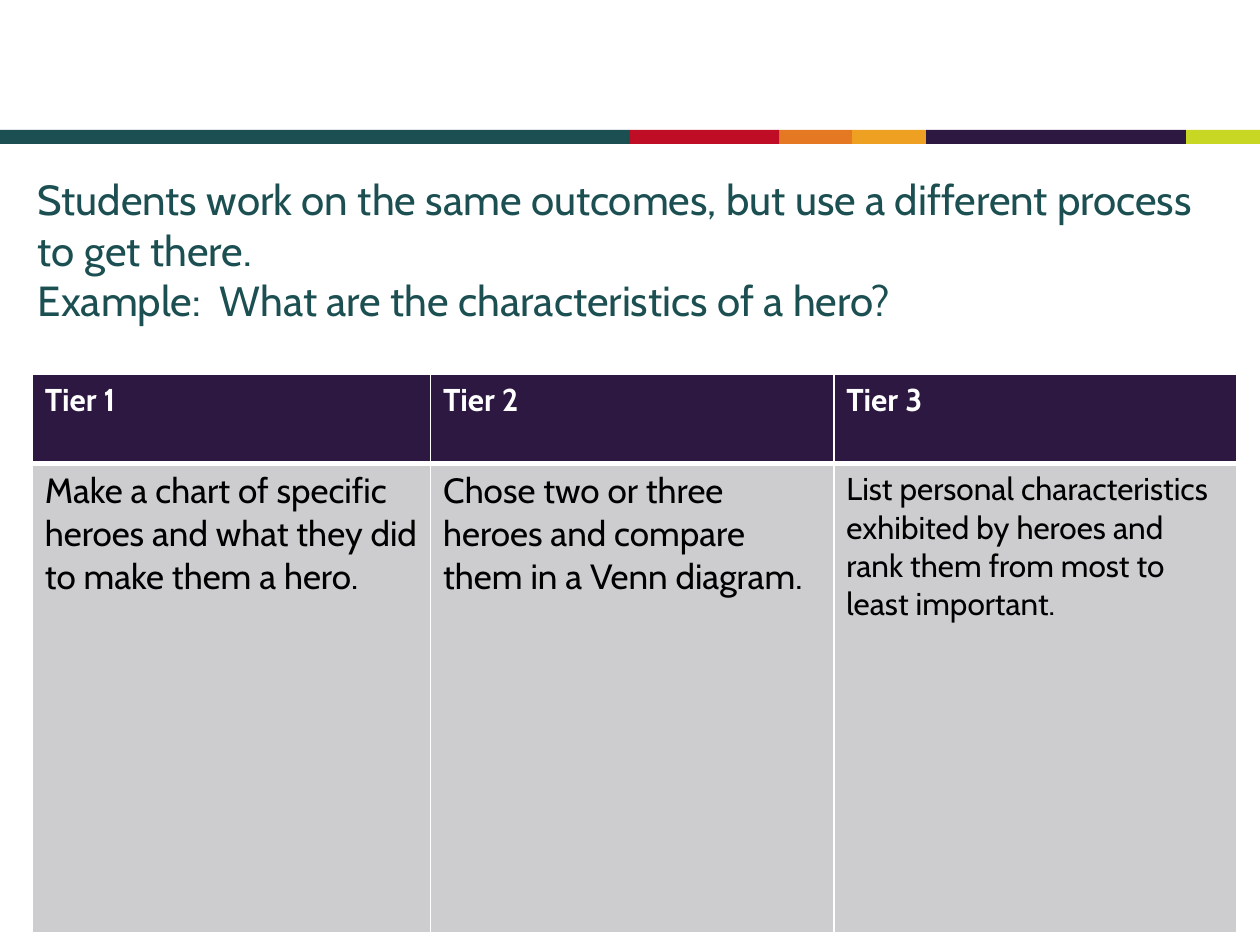
import copy

import pptx
import pptx.dml.color
import pptx.enum.shapes
import pptx.enum.text
import pptx.oxml
import pptx.oxml.ns
import pptx.util

Cm = pptx.util.Cm
Pt = pptx.util.Pt

THEME = {
    "font": "Cabin",
    "teal": "1C4F51", "red": "BF0D26", "orange": "E47823",
    "amber": "EDA021", "purple": "2C1840", "lime": "C8D724",
    "white": "FFFFFF", "black": "000000", "grey": "CDCCCF",
    "title": 24, "header": 18, "body": 20, "body_small": 18,
    "thin": 1, "thick": 3,
}

TITLE = ("Students work on the same outcomes, but use a different process to get there.\v"
         "Example:  What are the characteristics of a hero?")
# Colour and width in cm of each part of the stripe, left to right
STRIPE = [("teal", 12.7), ("red", 3.02), ("orange", 1.46),
          ("amber", 1.49), ("purple", 5.24), ("lime", 1.49)]
# Heading, task, size of the task text
TIERS = [
    ("Tier 1", "Make a chart of specific heroes and what they did to make them a hero.", "body"),
    ("Tier 2", "Chose two or three heroes and compare them in a Venn diagram.", "body"),
    ("Tier 3", "List personal characteristics exhibited by heroes and rank them "
               "from most to least important.", "body_small"),
]
COLUMN_WIDTHS = [8.03, 8.13, 8.13]
ROW_HEIGHTS = [1.8, 9.45]


def rgb(name):
    return pptx.dml.color.RGBColor.from_string(THEME[name])


def format_runs(p, size, color, bold=False):
    values = {"name": THEME["font"], "size": Pt(THEME[size]), "bold": bold}
    for r in p.runs:
        for key, value in values.items():
            setattr(r.font, key, value)
        r.font.color.rgb = rgb(color)


def add_stripe(s):
    left = 0
    for color, width in STRIPE:
        sp = s.shapes.add_shape(pptx.enum.shapes.MSO_SHAPE.RECTANGLE,
                                Cm(left), Cm(2.62), Cm(width), Cm(0.28))
        sp.shadow.inherit = False
        sp.fill.solid()
        sp.fill.fore_color.rgb = rgb(color)
        sp.line.fill.background()
        left += width


def add_title(s):
    sp = s.shapes.title
    box = {"left": 0.51, "top": 3.35, "width": 24.64, "height": 3.33}
    for key, value in box.items():
        setattr(sp, key, Cm(value))
    tf = sp.text_frame
    tf.text = TITLE
    frame = {"word_wrap": True,
             "auto_size": pptx.enum.text.MSO_AUTO_SIZE.NONE,
             "vertical_anchor": pptx.enum.text.MSO_ANCHOR.BOTTOM}
    for key, value in frame.items():
        setattr(tf, key, value)
    p = tf.paragraphs[0]
    p.alignment = pptx.enum.text.PP_ALIGN.LEFT
    format_runs(p, "title", "teal")
    # A line break needs the run's size too, or its line grows taller
    for br in p._p.findall(pptx.oxml.ns.qn("a:br")):
        br.append(copy.deepcopy(p.runs[0].font._element))


def set_borders(cell, widths):
    """Draw white borders, given as widths in points for L, R, T and B."""
    tcPr = cell._tc.get_or_add_tcPr()
    for i, (side, width) in enumerate(widths.items()):
        tcPr.insert(i, pptx.oxml.parse_xml(
            f'<a:ln{side} {pptx.oxml.ns.nsdecls("a")} w="{Pt(width)}"><a:solidFill>'
            f'<a:srgbClr val="{THEME["white"]}"/></a:solidFill></a:ln{side}>'))


def fill_cell(cell, text, fill, thick_side, **style):
    cell.text = text
    format_runs(cell.text_frame.paragraphs[0], **style)
    cell.fill.solid()
    cell.fill.fore_color.rgb = rgb(fill)
    set_borders(cell, {side: THEME["thick" if side == thick_side else "thin"]
                       for side in "LRTB"})


def add_tiers(s):
    table = s.shapes.add_table(
        len(ROW_HEIGHTS), len(TIERS), Cm(0.65), Cm(7.55),
        Cm(sum(COLUMN_WIDTHS)), Cm(sum(ROW_HEIGHTS))).table
    for column, width in zip(table.columns, COLUMN_WIDTHS):
        column.width = Cm(width)
    for row, height in zip(table.rows, ROW_HEIGHTS):
        row.height = Cm(height)
    for i, (heading, task, size) in enumerate(TIERS):
        fill_cell(table.cell(0, i), heading, "purple", "B",
                  size="header", color="white", bold=True)
        fill_cell(table.cell(1, i), task, "grey", "T", size=size, color="black")


def main():
    prs = pptx.Presentation()
    prs.slide_width, prs.slide_height = Cm(25.4), Cm(19.05)
    s = prs.slides.add_slide(prs.slide_layouts.get_by_name("Title Only"))
    add_stripe(s)
    add_title(s)
    add_tiers(s)
    prs.save("out.pptx")


if __name__ == "__main__":
    main()
